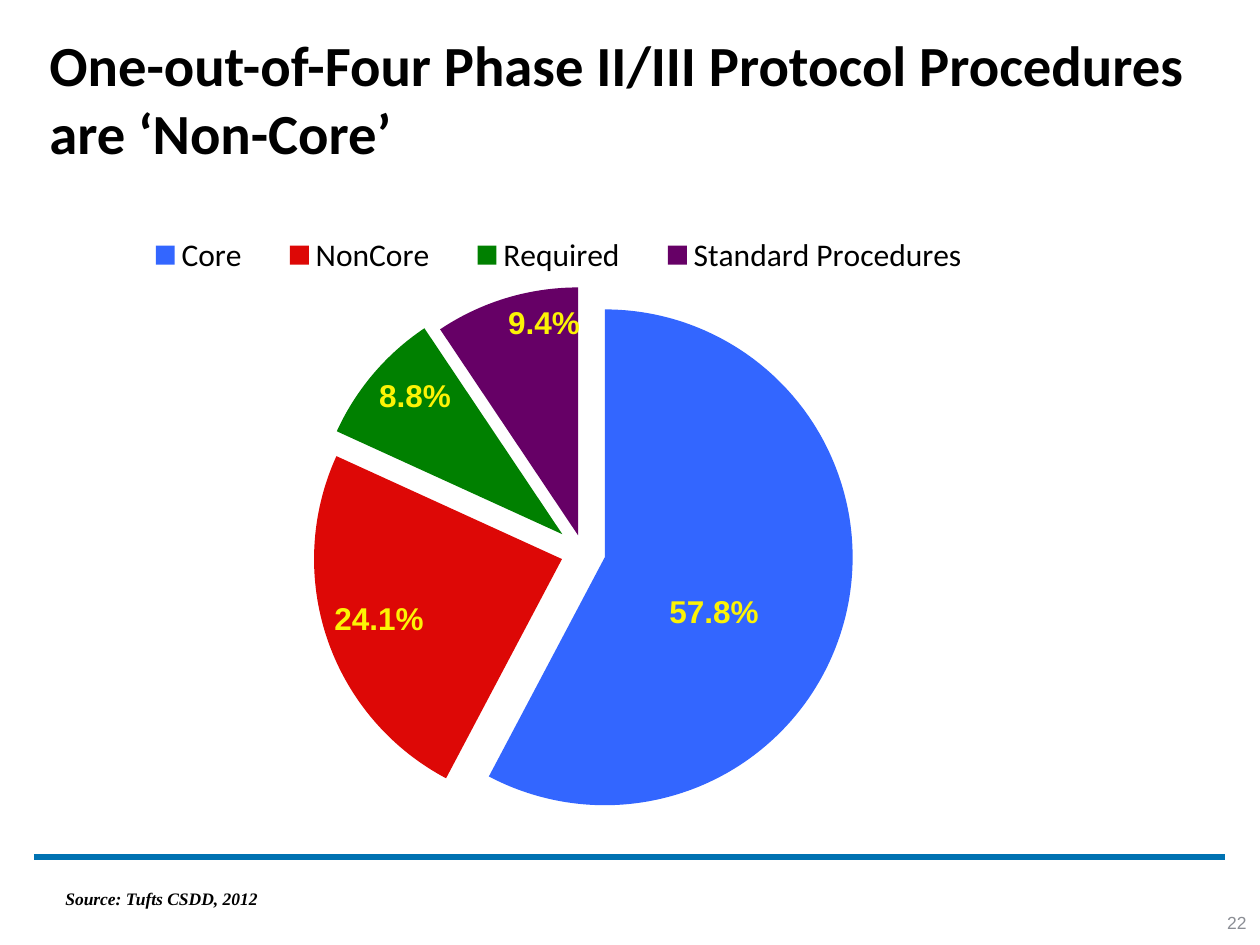
from dataclasses import dataclass
from lxml.etree import SubElement
from pptx import Presentation
from pptx.chart.data import CategoryChartData
from pptx.dml.color import RGBColor as RGB
from pptx.enum.chart import XL_CHART_TYPE as Kind, XL_LABEL_POSITION as Spot
from pptx.enum.chart import XL_LEGEND_POSITION as Side
from pptx.enum.shapes import MSO_CONNECTOR as Link
from pptx.enum.text import MSO_ANCHOR as Anchor, PP_ALIGN as Align
from pptx.oxml import parse_xml
from pptx.oxml.ns import nsdecls, qn
from pptx.util import Pt

TITLE = "One-out-of-Four Phase II/III Protocol Procedures are ‘Non-Core’"
SOURCE = "Source: Tufts CSDD, 2012"
PAGE = "22"
# name, share, colour, explosion in % of the radius
SLICES = [
    ("Core", 0.578, "3366FF", 9),
    ("NonCore", 0.241, "DD0806", 9),
    ("Required", 0.088, "008000", 11),
    ("Standard Procedures", 0.094, "660066", 7),
]
FORMAT = "0.0%"


@dataclass(frozen=True)
class Theme:
    ink: str = "000000"
    rule: str = "0072B2"
    grey: str = "8B8E95"
    label: str = "FCF305"
    head: float = 32.4
    chart: int = 18
    note: int = 10
    sans: str = "Calibri"
    plain: str = "Arial"
    serif: str = "Times New Roman"


theme = Theme()


def px(n):
    return round(n * 914400 / 126)


def style(font, size, name, color, bold=False, italic=False):
    font.size, font.name = Pt(size), name
    font.color.rgb = RGB.from_string(color)
    font.bold, font.italic = bold, italic


def write(slide, text, box, align=Align.LEFT, anchor=Anchor.TOP, **look):
    frame = slide.shapes.add_textbox(*map(px, box)).text_frame
    frame.word_wrap = True
    frame.vertical_anchor = anchor
    para = frame.paragraphs[0]
    para.alignment = align
    run = para.add_run()
    run.text = text
    style(run.font, **look)


def layout(**parts):
    """Manual chart layout; lengths are fractions of the chart."""
    body = "".join(f'<c:{k} val="{v}"/>' for k, v in parts.items())
    return parse_xml(f'<c:layout {nsdecls("c")}><c:manualLayout>{body}'
                     '</c:manualLayout></c:layout>')


def place(owner, new, after=None):
    """Put a layout in a chart part, replacing any old one."""
    for old in owner.findall(qn("c:layout")):
        owner.remove(old)
    if after is None:
        owner.insert(0, new)
    else:
        owner.find(qn(after)).addnext(new)


def draw_rule(slide):
    line = slide.shapes.add_connector(Link.STRAIGHT, *map(px, (34, 857, 1225, 857)))
    line.line.color.rgb = RGB.from_string(theme.rule)
    line.line.width = Pt(3)
    SubElement(line.element.spPr, qn("a:effectLst"))


def draw_pie(slide):
    data = CategoryChartData(number_format=FORMAT)
    data.categories = [s[0] for s in SLICES]
    data.add_series("Series 1", [s[1] for s in SLICES])
    chart = slide.shapes.add_chart(
        Kind.PIE, *map(px, (63, 221, 1102, 620)), data).chart
    style(chart.font, theme.chart, theme.sans, theme.ink)
    chart.has_title = False
    chart.has_legend = True
    chart.legend.position = Side.RIGHT
    chart.legend.include_in_layout = False
    plot = chart.plots[0]
    plot.vary_by_categories = True
    series = plot.series[0]

    labels = series.data_labels
    labels.show_value = True
    labels.show_percentage = False
    labels.number_format = FORMAT
    labels.number_format_is_linked = False
    labels.position = Spot.INSIDE_END
    first = series.points[0].data_label
    first.position = Spot.CENTER
    for part in (labels, first):
        style(part.font, theme.chart, theme.plain, theme.label, bold=True)

    for i, (_, _, color, gap) in enumerate(SLICES):
        fill = series.points[i].format.fill
        fill.solid()
        fill.fore_color.rgb = RGB.from_string(color)
    root = chart.element
    for point, (*_, gap) in zip(root.xpath(".//c:dPt"), SLICES):
        burst = parse_xml(f'<c:explosion {nsdecls("c")} val="{gap}"/>')
        point.find(qn("c:spPr")).addprevious(burst)

    label = root.xpath(".//c:dLbl")[0]
    place(label, layout(x=-0.01, y=0.04), "c:idx")
    label.find(qn("c:layout")).addnext(parse_xml(
        f'<c:numFmt {nsdecls("c")} formatCode="{FORMAT}" sourceLinked="0"/>'))
    edge = dict(xMode="edge", yMode="edge")
    place(root.xpath(".//c:plotArea")[0],
          layout(layoutTarget="inner", **edge, x=0.247, y=0.133, w=0.45, h=0.802))
    place(root.xpath(".//c:legend")[0],
          layout(**edge, x=0.05, y=0.02, w=0.8, h=0.07), "c:legendPos")


def main():
    deck = Presentation()
    deck.slide_width, deck.slide_height = px(1260), px(945)
    slide = deck.slides.add_slide(deck.slide_layouts[6])
    draw_rule(slide)
    write(slide, TITLE, (37, 18, 1187, 159), anchor=Anchor.MIDDLE,
          size=theme.head, name=theme.sans, color=theme.ink, bold=True)
    write(slide, PAGE, (1207, 903, 52, 40), Align.RIGHT, Anchor.MIDDLE,
          size=theme.note, name=theme.plain, color=theme.grey)
    draw_pie(slide)
    write(slide, SOURCE, (53, 882, 1148, 34), size=theme.note,
          name=theme.serif, color=theme.ink, bold=True, italic=True)
    deck.save("out.pptx")


if __name__ == "__main__":
    main()
